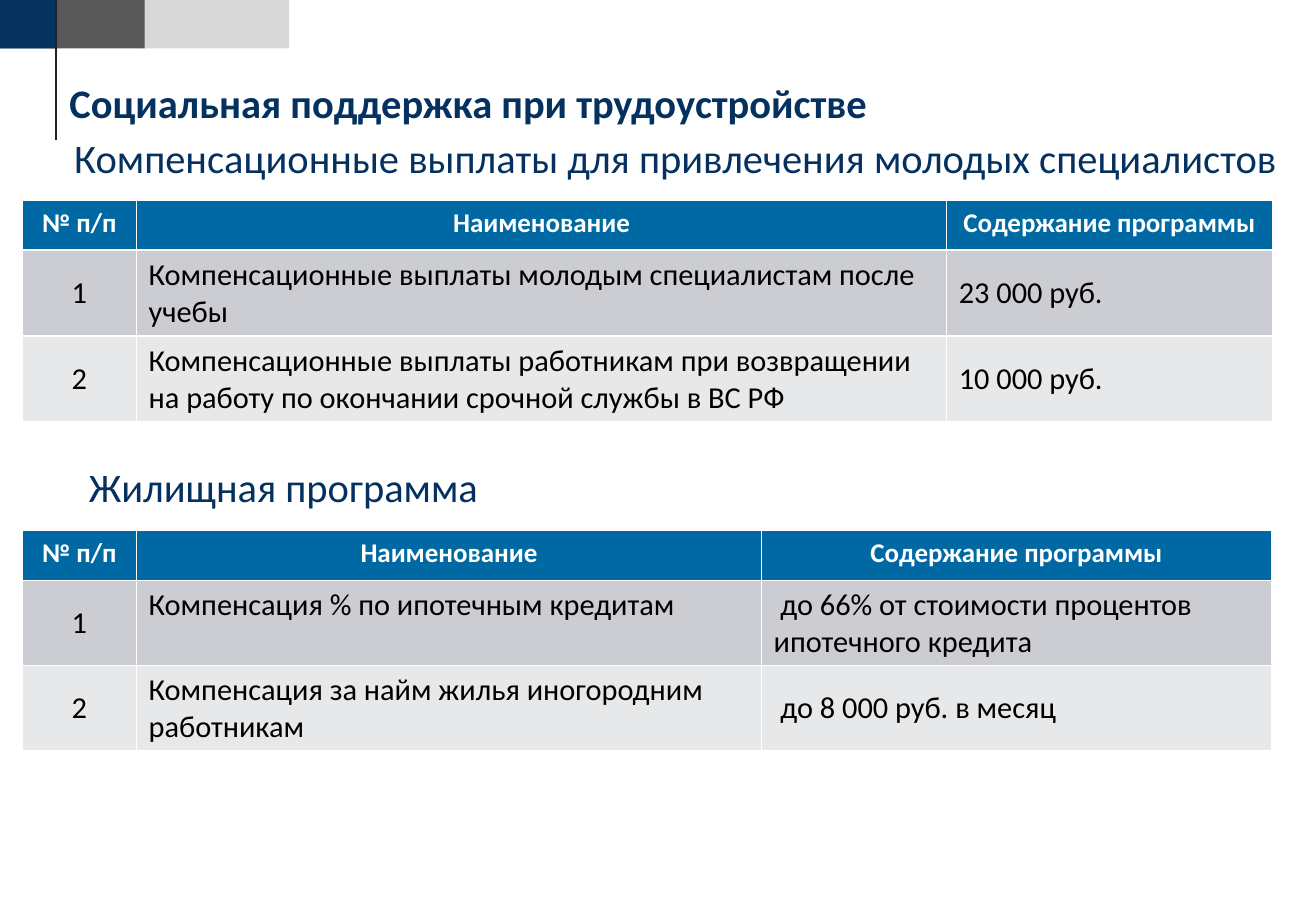
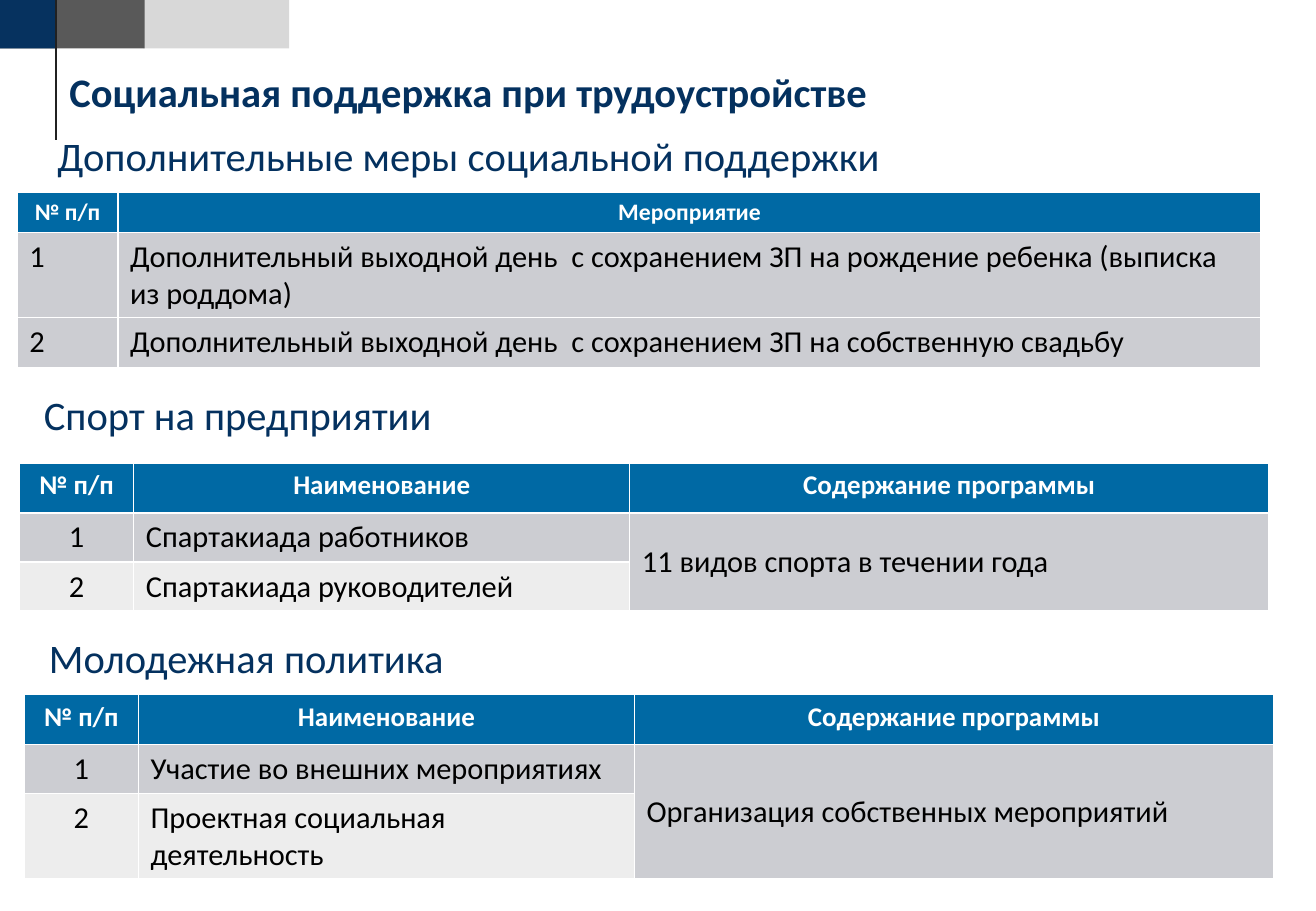
from lxml import etree
from pptx import Presentation
from pptx.dml.color import RGBColor
from pptx.enum import shapes, text
from pptx.oxml.ns import qn
from pptx.util import Pt

NAVY, HEADER_BLUE, WHITE, BLACK = "04315F", "0069A4", "FFFFFF", "000000"
ROW_GREY, LIGHT_GREY, PALE_GREY = "CCCDD2", "E7E8EA", "EDEDED"
TOP, MIDDLE = text.MSO_ANCHOR.TOP, text.MSO_ANCHOR.MIDDLE
LEFT, CENTER = text.PP_ALIGN.LEFT, text.PP_ALIGN.CENTER


def color(value):
    return RGBColor.from_string(value)


def write(frame, words, size, ink, bold=False, align=LEFT):
    """Set the only paragraph of a text frame and return it."""
    frame.text = words
    para = frame.paragraphs[0]
    para.alignment = align
    for span in para.runs:
        span.font.name = "Calibri"
        span.font.size = Pt(size)
        span.font.bold = bold
        span.font.color.rgb = color(ink)
    return para


title = "Социальная поддержка при трудоустройстве"
columns = ["№ п/п", "Наименование", "Содержание программы"]

# Each section: heading, its (left, top, width), table (left, top),
# column widths, row heights, second row fill, rows of text.
pages = [
    {"title_top": 42.5, "number_anchor": MIDDLE, "sections": [
        ("Компенсационные выплаты для привлечения молодых специалистов",
         (41, 75.6, 748), (13.2, 118.8), (67.7, 480.2, 193), (29.5, 51, 51), LIGHT_GREY,
         [columns,
          ["1", "Компенсационные выплаты молодым специалистам после учебы", "23 000 руб."],
          ["2", "Компенсационные выплаты работникам при возвращении на работу "
                "по окончании срочной службы в ВС РФ", "10 000 руб."]]),
        ("Жилищная программа",
         (49.7, 270.7, 247), (13.2, 314.6), (67.7, 370.5, 302.3), (29.5, 50.4, 50.4), LIGHT_GREY,
         [columns,
          ["1", "Компенсация % по ипотечным кредитам",
           "до 66% от стоимости процентов ипотечного кредита"],
          ["2", "Компенсация за найм жилья иногородним работникам",
           "до 8 000 руб. в месяц"]]),
    ]},
    {"title_top": 36, "number_anchor": TOP, "sections": [
        ("Дополнительные меры социальной поддержки",
         (31, 74.2, 514), (10.2, 113.8), (59.8, 677.5), (24, 50.4, 29.5), ROW_GREY,
         [["№ п/п", "Мероприятие"],
          ["1", "Дополнительный выходной день  с сохранением ЗП на рождение ребенка "
                "(выписка из роддома)"],
          ["2", "Дополнительный выходной день  с сохранением ЗП на собственную свадьбу"]]),
        ("Спорт на предприятии",
         (23, 228.2, 243.4), (11.6, 274.5), (67.7, 294, 378.7), (29.5, 29.2, 29), PALE_GREY,
         [columns,
          ["1", "Спартакиада работников", "11 видов спорта в течении года"],
          ["2", "Спартакиада руководителей", None]]),
        ("Молодежная политика",
         (26, 372.2, 250), (14.4, 411.8), (67.7, 294, 378.7), (29.5, 29.2, 50.4), PALE_GREY,
         [columns,
          ["1", "Участие во внешних мероприятиях", "Организация собственных мероприятий"],
          ["2", "Проектная социальная деятельность", None]]),
    ]},
]

deck = Presentation()
deck.slide_width, deck.slide_height = Pt(780), Pt(540)
layout = deck.slide_layouts.get_by_name("Title Only")

for number, content in enumerate(pages):
    page = deck.slides.add_slide(layout)

    # The corner bands and rule are drawn once and moved to the layout.
    if number == 0:
        decor = []
        for left, width, fill in [(85, 86.4, "D8D8D8"), (0, 85.8, "595959"), (0, 33.2, "06325F")]:
            band = page.shapes.add_shape(
                shapes.MSO_SHAPE.RECTANGLE, Pt(left), 0, Pt(width), Pt(28.8))
            band.shadow.inherit = False
            band.fill.solid()
            band.fill.fore_color.rgb = color(fill)
            band.line.fill.background()
            decor.append(band)
        rule = page.shapes.add_connector(
            shapes.MSO_CONNECTOR.STRAIGHT, Pt(33.2), Pt(82.8), Pt(33.2), 0)
        rule.line.color.rgb = color("212121")
        rule.line.width = Pt(0.75)
        etree.SubElement(rule.element.spPr, qn("a:effectLst"))
        for item in decor + [rule]:
            layout.shapes.element.append(item.element)

    heading = page.shapes.title
    heading.left, heading.top = Pt(37.5), Pt(content["title_top"])
    heading.width, heading.height = Pt(692), Pt(38)
    frame = heading.text_frame
    frame.vertical_anchor = TOP
    frame.auto_size = text.MSO_AUTO_SIZE.NONE
    frame.margin_left = frame.margin_right = frame.margin_top = frame.margin_bottom = Pt(3.6)
    write(frame, title, 24, NAVY, bold=True)

    for name, (left, top, width), corner, widths, heights, second_fill, rows in content["sections"]:
        box = page.shapes.add_textbox(Pt(left), Pt(top), Pt(width), Pt(35.2))
        frame = box.text_frame
        frame.word_wrap = False
        frame.auto_size = text.MSO_AUTO_SIZE.SHAPE_TO_FIT_TEXT
        frame.vertical_anchor = MIDDLE
        frame.margin_left = frame.margin_right = frame.margin_top = frame.margin_bottom = Pt(3)
        write(frame, name, 24, NAVY)

        table = page.shapes.add_table(
            len(rows), len(widths), Pt(corner[0]), Pt(corner[1]),
            Pt(sum(widths)), Pt(sum(heights))).table
        for column, width in zip(table.columns, widths):
            column.width = Pt(width)
        for row, height in zip(table.rows, heights):
            row.height = Pt(height)

        three_columns = len(widths) == 3
        header_size = 16 if three_columns else 14
        fills = [HEADER_BLUE, ROW_GREY, second_fill]
        for r, row in enumerate(rows):
            for c, words in enumerate(row):
                cell = table.cell(r, c)
                if words is None:
                    table.cell(r - 1, c).merge(cell)
                    continue
                cell.fill.solid()
                cell.fill.fore_color.rgb = color(fills[r])
                if r == 0:
                    write(cell.text_frame, words, header_size, WHITE, True, CENTER)
                    continue
                align = CENTER if c == 0 and three_columns else LEFT
                para = write(cell.text_frame, words, 18, BLACK, align=align)
                cell.vertical_anchor = [content["number_anchor"], TOP, MIDDLE][c]
                if words.startswith("до "):
                    para._p.get_or_add_pPr().set("indent", str(Pt(4)))

deck.save("out.pptx")
